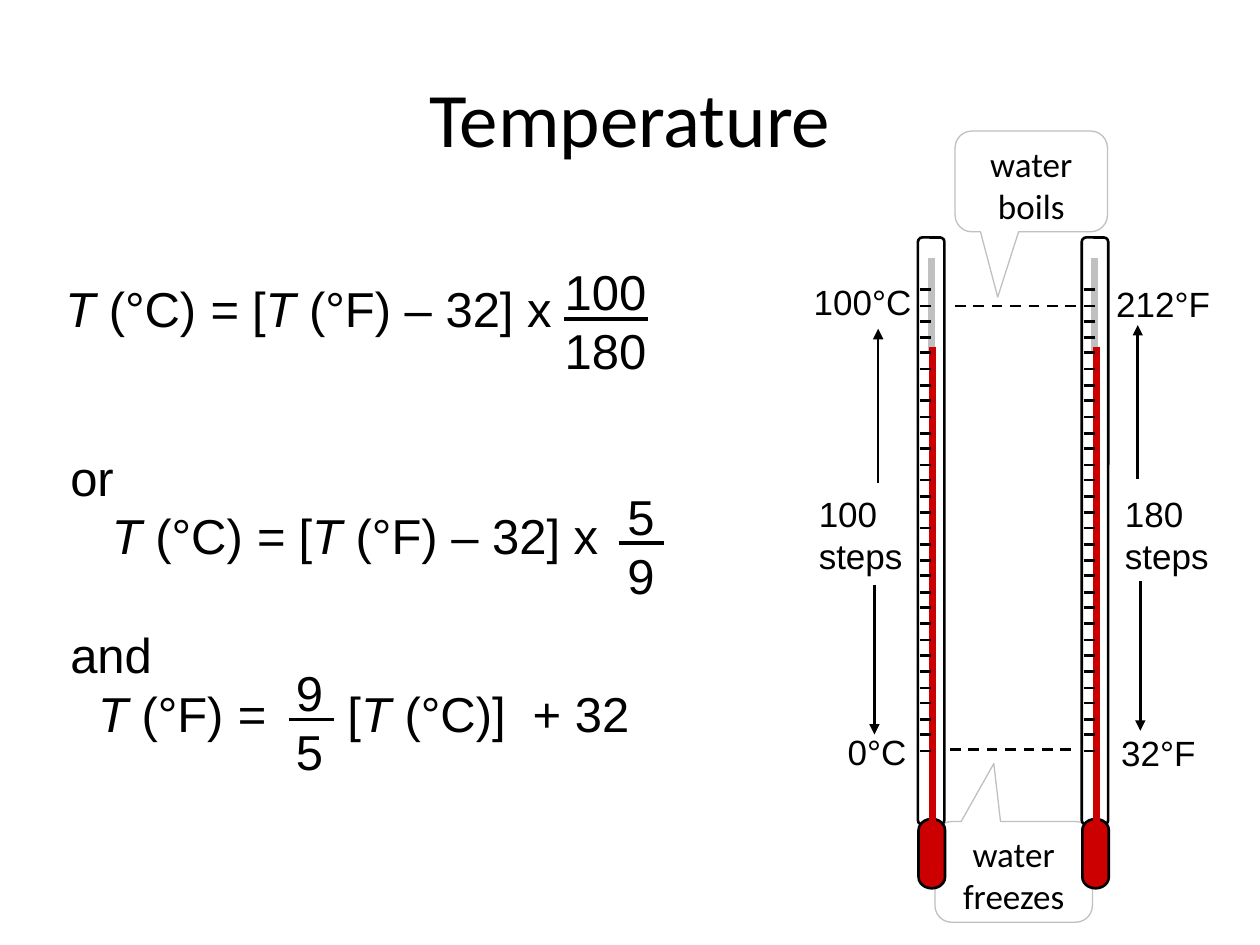
from dataclasses import dataclass

from lxml.etree import SubElement
from pptx import Presentation
from pptx.dml.color import RGBColor
from pptx.enum.dml import MSO_LINE
from pptx.enum.shapes import MSO_CONNECTOR, MSO_SHAPE
from pptx.enum.text import MSO_ANCHOR, MSO_AUTO_SIZE, PP_ALIGN
from pptx.oxml.ns import qn
from pptx.util import Pt

PX = 9144  # EMU per px, 100 px to the inch


@dataclass(frozen=True)
class Theme:
    ink: str = "000000"
    paper: str = "FFFFFF"
    gray: str = "C0C0C0"
    red: str = "CC0000"
    head: str = "Calibri"
    body: str = "Arial"
    title: int = 44
    math: int = 28
    label: int = 20


@dataclass(frozen=True)
class Line:
    """One paragraph: italic parts stand between asterisks."""
    text: str
    tabs: tuple[int, ...] = ()
    before: float = 0


@dataclass(frozen=True)
class Ratio:
    top: str
    low: str
    x: int
    y: int
    width: int
    bar_x: int
    bar_w: int


@dataclass(frozen=True)
class Label:
    lines: tuple[str, ...]
    x: int
    y: int
    width: int
    height: int


@dataclass(frozen=True)
class Bubble:
    text: str
    box: tuple[int, int, int, int]
    tip: tuple[float, float]


@dataclass(frozen=True)
class Stroke:
    start: tuple[int, int]
    end: tuple[int, int]
    dash: bool = False
    arrow: bool = False


THEME = Theme()
RULE = "*T *(°C) *= *[*T *(°F) – 32] x"
PROOF = [
    Line("or"),
    Line("\t" + RULE, (33,)),
    Line("and", before=34),
    Line("\t*T *(°F) *=*\t[*T *(°C)]\t+ 32", (22, 220, 367)),
]
RATIOS = [
    Ratio("5", "9", 488, 381, 41, 491, 36),
    Ratio("9", "5", 225, 521, 41, 229, 36),
    Ratio("100", "180", 438, 203, 85, 448, 66),
]
FREEZE = Bubble("water freezes", (742, 652, 125, 80), (-0.126, -1.075))
BOIL = Bubble("water boils", (758, 104, 121, 80), (-0.22, 1.148))
LABELS = [
    Label(("100", "steps"), 640, 386, 96, 77),
    Label(("180", "steps"), 883, 386, 96, 77),
    Label(("0°C",), 663, 575, 77, 43),
    Label(("100°C",), 636, 218, 108, 43),
    Label(("32°F",), 880, 576, 89, 43),
    Label(("212°F",), 876, 219, 105, 43),
]
STROKES = [
    Stroke((758, 243), (855, 243), dash=True),
    Stroke((754, 595), (852, 595), dash=True),
    Stroke((697, 383), (697, 261), arrow=True),
    Stroke((694, 464), (694, 583), arrow=True),
    Stroke((905, 461), (905, 580), arrow=True),
    Stroke((903, 380), (903, 258), arrow=True),
]
TUBES = (739, 869)
TICKS, TICK_TOP, TICK_LOW = 30, 230, 596


def style(item, **values) -> None:
    for name, value in values.items():
        setattr(item, name, value)


def tint(text: str) -> RGBColor:
    return RGBColor.from_string(text)


def emu(*sides: int) -> list[int]:
    return [side * PX for side in sides]


def write(frame, lines: list[Line], face: str, size: int, align=PP_ALIGN.LEFT) -> None:
    for i, line in enumerate(lines):
        para = frame.paragraphs[0] if i == 0 else frame.add_paragraph()
        style(para, alignment=align, space_before=Pt(line.before))
        if line.tabs:
            stops = SubElement(para._p.get_or_add_pPr(), qn("a:tabLst"))
            for stop in line.tabs:
                SubElement(stops, qn("a:tab"), pos=str(stop * PX), algn="l")
        for j, part in enumerate(line.text.split("*")):
            if part:
                run = para.add_run()
                run.text = part
                style(run.font, name=face, size=Pt(size), italic=j % 2 == 1)
                run.font.color.rgb = tint(THEME.ink)


def text(slide, box: tuple[int, ...], lines: list[Line], size: int,
         align=PP_ALIGN.LEFT, wrap: bool = False) -> None:
    frame = slide.shapes.add_textbox(*emu(*box)).text_frame
    style(frame, word_wrap=wrap, auto_size=MSO_AUTO_SIZE.SHAPE_TO_FIT_TEXT)
    write(frame, lines, THEME.body, size, align)


def stroke(slide, item: Stroke, width: float = 1.5, color: str = THEME.ink) -> None:
    link = slide.shapes.add_connector(MSO_CONNECTOR.STRAIGHT, *emu(*item.start, *item.end))
    link.line.width = Pt(width)
    link.line.color.rgb = tint(color)
    if item.dash:
        link.line.dash_style = MSO_LINE.DASH
    if item.arrow:
        SubElement(link.line._get_or_add_ln(), qn("a:tailEnd"), type="triangle")
    SubElement(link._element.spPr, qn("a:effectLst"))


def shape(slide, kind, box: tuple[int, ...], fill: str | None, edge: str, width: float):
    item = slide.shapes.add_shape(kind, *emu(*box))
    item.shadow.inherit = False
    if fill:
        item.fill.solid()
        item.fill.fore_color.rgb = tint(fill)
    else:
        item.fill.background()
    item.line.color.rgb = tint(edge)
    item.line.width = Pt(width)
    return item


def bubble(slide, note: Bubble) -> None:
    item = shape(slide, MSO_SHAPE.ROUNDED_RECTANGULAR_CALLOUT, note.box,
                 THEME.paper, THEME.gray, 0.75)
    for i, value in enumerate((*note.tip, 0.167)):
        item.adjustments[i] = value
    style(item.text_frame, word_wrap=True, vertical_anchor=MSO_ANCHOR.TOP)
    write(item.text_frame, [Line(note.text)], THEME.head, THEME.label, PP_ALIGN.CENTER)


def ratio(slide, item: Ratio) -> None:
    text(slide, (item.x, item.y, item.width, 103), [Line(item.top), Line(item.low)],
         THEME.math, PP_ALIGN.CENTER)
    y = item.y + 50
    stroke(slide, Stroke((item.bar_x, y), (item.bar_x + item.bar_w, y)), 2)


def tube(slide, x: int) -> None:
    """Draw a thermometer centred on x."""
    parts = [
        (MSO_SHAPE.FLOWCHART_ALTERNATE_PROCESS, (x - 233, 411, 466, 21), None),
        (MSO_SHAPE.FLOWCHART_TERMINATOR, (x - 27, 667, 55, 21), THEME.red),
    ]
    for kind, box, fill in parts:
        shape(slide, kind, box, fill, THEME.ink, 1.5).rotation = 90
    stroke(slide, Stroke((x, 205), (x, 281)), 4, THEME.gray)
    stroke(slide, Stroke((x + 1, 275), (x + 1, 678)), 4, THEME.red)
    for i in range(TICKS):
        y = TICK_TOP + round(i * (TICK_LOW - TICK_TOP) / (TICKS - 1))
        stroke(slide, Stroke((x - 9, y), (x, y)))


def main() -> None:
    deck = Presentation()
    style(deck, slide_width=1000 * PX, slide_height=750 * PX)
    slide = deck.slides.add_slide(deck.slide_layouts[5])
    title = slide.shapes.title
    style(title, left=50 * PX, top=30 * PX, width=900 * PX, height=125 * PX)
    title.text_frame.vertical_anchor = MSO_ANCHOR.MIDDLE
    write(title.text_frame, [Line("Temperature")], THEME.head, THEME.title, PP_ALIGN.CENTER)

    text(slide, (46, 350, 480, 243), PROOF, THEME.math, wrap=True)
    text(slide, (42, 216, 406, 56), [Line(RULE)], THEME.math)
    for item in RATIOS:
        ratio(slide, item)
    bubble(slide, FREEZE)
    for x in TUBES:
        tube(slide, x)
    for item in LABELS:
        text(slide, (item.x, item.y, item.width, item.height),
             [Line(part) for part in item.lines], THEME.label, wrap=True)
    bubble(slide, BOIL)
    for item in STROKES:
        stroke(slide, item)
    deck.save("out.pptx")


if __name__ == "__main__":
    main()
